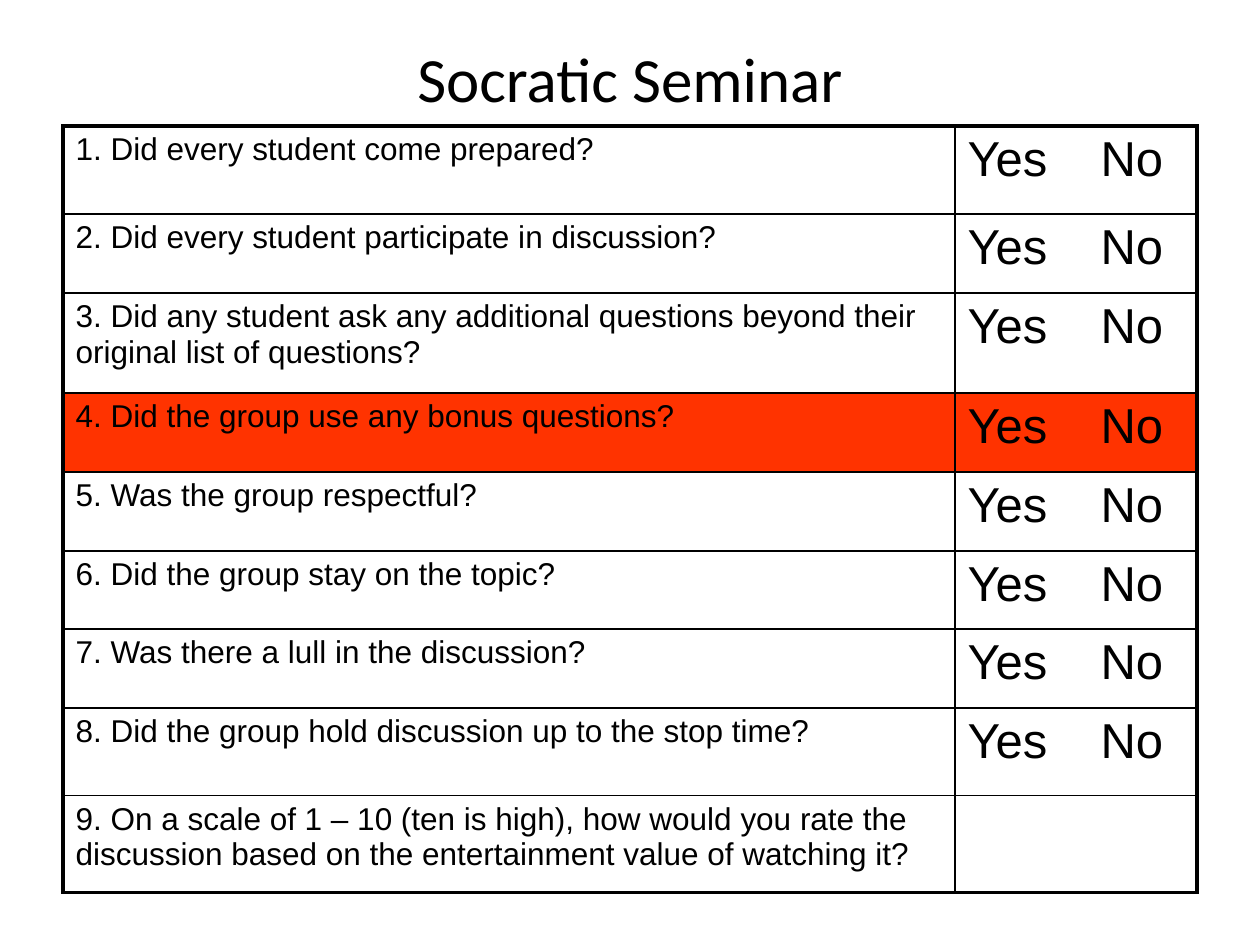
from lxml import etree
from pptx import Presentation
from pptx import util as u
from pptx.dml.color import RGBColor
from pptx.enum import text
from pptx.oxml import ns

PX_PER_INCH = 126
BLACK = RGBColor(0x00, 0x00, 0x00)
ORANGE_RED = RGBColor(0xFF, 0x33, 0x00)

QUESTIONS = [
    "Did every student come prepared?",
    "Did every student participate in discussion?",
    "Did any student ask any additional questions beyond their original list of questions?",
    "Did the group use any bonus questions?",
    "Was the group respectful?",
    "Did the group stay on the topic?",
    "Was there a lull in the discussion?",
    "Did the group hold discussion up to the stop time?",
    "On a scale of 1 – 10 (ten is high), how would you rate the discussion "
    "based on the entertainment value of watching it?",
]
BONUS_ROW = 3
ROW_HEIGHTS = [88, 79, 100, 79, 79, 78, 79, 88, 97]
ANSWER_WIDTH = 242
NO_TAB = 133


def px(length):
    return u.Emu(round(length * 914400 / PX_PER_INCH))


def add_child(parent, tag, **attributes):
    return etree.SubElement(parent, ns.qn(tag), attributes)


def format_span(para, font, size):
    for span in para.runs:
        span.font.name = font
        span.font.size = u.Pt(size)
        span.font.color.rgb = BLACK


def add_title(page, left, top, width, height):
    box = page.shapes.add_textbox(px(left), px(top), px(width), px(height))
    frame = box.text_frame
    frame.word_wrap = True
    frame.vertical_anchor = text.MSO_ANCHOR.MIDDLE
    frame.text = "Socratic Seminar"
    para = frame.paragraphs[0]
    para.alignment = text.PP_ALIGN.CENTER
    format_span(para, "Calibri", 36)


def set_borders(cell, outer_sides):
    """Draw all four sides, with a heavier line on the table's outer edge."""
    properties = cell._tc.get_or_add_tcPr()
    for side in "LRTB":
        weight = u.Pt(2.25 if side in outer_sides else 1)
        line = add_child(properties, f"a:ln{side}", w=str(weight))
        fill = add_child(line, "a:solidFill")
        add_child(fill, "a:srgbClr", val=str(BLACK))


def fill_cell(cell, wording, size, tab=None):
    cell.text_frame.text = wording
    para = cell.text_frame.paragraphs[0]
    format_span(para, "Arial", size)
    properties = para._p.get_or_add_pPr()
    add_child(add_child(properties, "a:spcBef"), "a:spcPct", val="20000")
    if tab:
        stops = add_child(properties, "a:tabLst")
        add_child(stops, "a:tab", pos=str(px(tab)), algn="l")


def add_checklist(page, left, top, width):
    last = len(QUESTIONS) - 1
    frame = page.shapes.add_table(len(QUESTIONS), 2, px(left), px(top),
                                  px(width), px(sum(ROW_HEIGHTS)))
    table = frame.table
    table.first_row = False
    table.horz_banding = False
    table.columns[0].width = px(width - ANSWER_WIDTH)
    table.columns[1].width = px(ANSWER_WIDTH)

    for row, (question, height) in enumerate(zip(QUESTIONS, ROW_HEIGHTS)):
        table.rows[row].height = px(height)
        fill_cell(table.cell(row, 0), f"{row + 1}. {question}", 18)
        if row != last:
            fill_cell(table.cell(row, 1), "Yes\tNo", 28, NO_TAB)
        edges = {0: "T", last: "B"}.get(row, "")
        for column, side in enumerate("LR"):
            cell = table.cell(row, column)
            set_borders(cell, side + edges)
            if row == BONUS_ROW:
                cell.fill.solid()
                cell.fill.fore_color.rgb = ORANGE_RED
            else:
                cell.fill.background()


def main():
    deck = Presentation()
    deck.slide_width = px(1260)
    deck.slide_height = px(945)
    page = deck.slides.add_slide(deck.slide_layouts[6])
    add_title(page, 63, 38, 1134, 78)
    add_checklist(page, 63, 126, 1134)
    deck.save("out.pptx")


if __name__ == "__main__":
    main()
